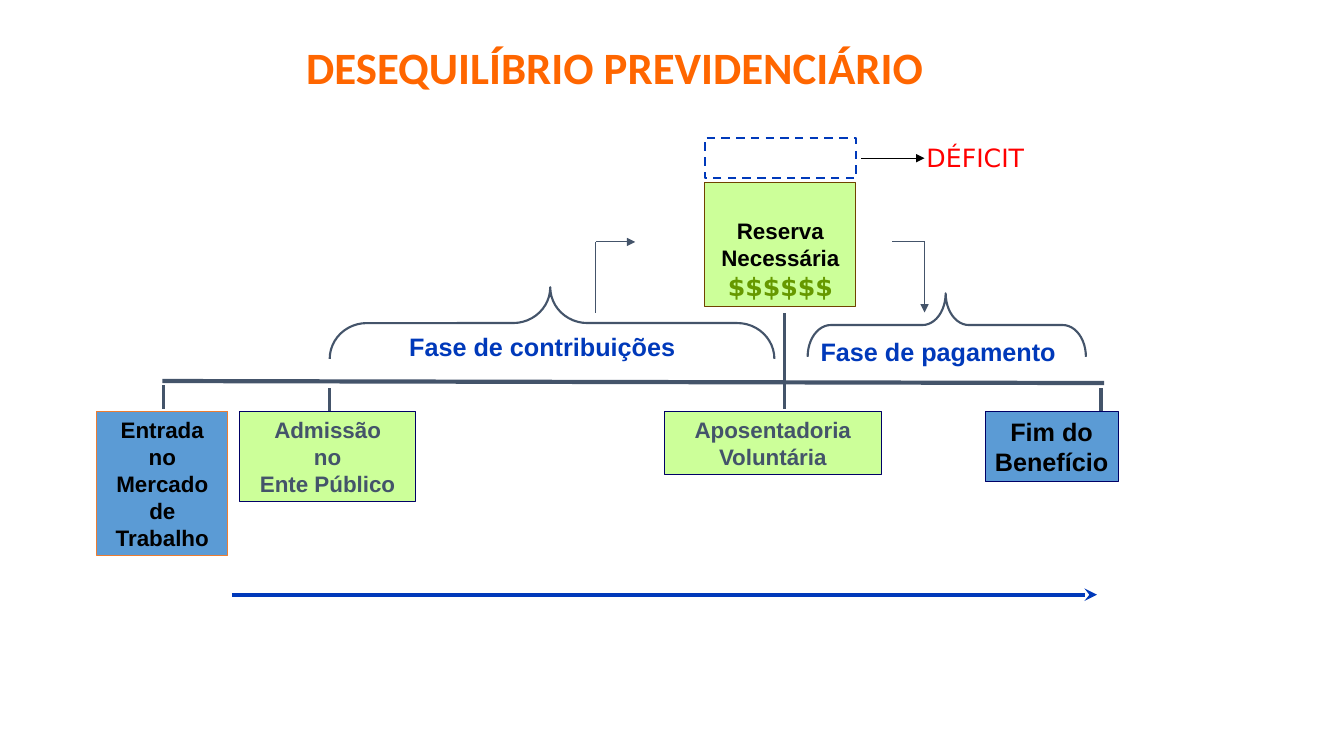
from lxml import etree
from pptx import Presentation
from pptx.dml.color import RGBColor
from pptx.enum.dml import MSO_LINE
from pptx.enum.shapes import MSO_CONNECTOR, MSO_SHAPE
from pptx.enum.text import MSO_ANCHOR, MSO_AUTO_SIZE, PP_ALIGN
from pptx.oxml.ns import qn
from pptx.util import Inches, Pt

STRAIGHT = MSO_CONNECTOR.STRAIGHT
RECTANGLE, BRACE = MSO_SHAPE.RECTANGLE, MSO_SHAPE.LEFT_BRACE
LEFT, CENTER = PP_ALIGN.LEFT, PP_ALIGN.CENTER
TOP, MIDDLE, BOTTOM = MSO_ANCHOR.TOP, MSO_ANCHOR.MIDDLE, MSO_ANCHOR.BOTTOM

COLORS = {
    "orange": "FF6600", "slate": "44546A", "blue": "0039BA", "sky": "5B9BD5",
    "lime": "CCFF99", "navy": "000066", "rust": "ED7D31", "brown": "704300",
    "green": "669900", "red": "FF0000", "black": "000000",
}


def color(name):
    return RGBColor.from_string(COLORS[name])


def add_line(page, start, end, name, width, head=None):
    """Straight line, with an optional arrowhead at its end."""
    line = page.shapes.add_connector(STRAIGHT, *map(Inches, start + end))
    line.line.color.rgb = color(name)
    line.line.width = Pt(width)
    etree.SubElement(line._element.spPr, qn("a:effectLst"))
    if head:
        etree.SubElement(line.line._get_or_add_ln(), qn("a:tailEnd"), type=head)


def add_outline(page, kind, box, line, width, fill=None):
    shape = page.shapes.add_shape(kind, *map(Inches, box))
    shape.shadow.inherit = False
    if fill:
        shape.fill.solid()
        shape.fill.fore_color.rgb = color(fill)
    else:
        shape.fill.background()
    shape.line.color.rgb = color(line)
    shape.line.width = Pt(width)
    return shape


def write(shape, lines, name, size, font="Arial", bold=True, align=CENTER,
          anchor=TOP, wrap=True):
    """Fill a shape with one paragraph per line of text."""
    frame = shape.text_frame
    frame.word_wrap = wrap
    frame.auto_size = MSO_AUTO_SIZE.NONE
    frame.vertical_anchor = anchor
    frame.margin_left = frame.margin_right = Inches(0.1)
    frame.margin_top = frame.margin_bottom = Inches(0.05)
    for index, text in enumerate(lines):
        para = frame.add_paragraph() if index else frame.paragraphs[0]
        para.alignment = align
        span = para.add_run()
        span.text = text
        style(span, name, size, font, bold)


def style(span, name, size, font, bold=True):
    span.font.name = font
    span.font.size = Pt(size)
    span.font.bold = bold
    span.font.color.rgb = color(name)


def add_label(page, box, text, name, **options):
    label = page.shapes.add_textbox(*map(Inches, box))
    write(label, [text], name, 18, align=LEFT, **options)


def add_title(page, box):
    title = page.shapes.title
    title.left, title.top, title.width, title.height = map(Inches, box)
    write(title, ["DESEQUILÍBRIO PREVIDENCIÁRIO"], "orange", 32, "Calibri",
          anchor=MIDDLE)


def add_timeline(page, box):
    """Axis with its ticks, the milestones below and the time arrow."""
    left, top, width, height = box
    add_line(page, (left, top), (left + width, top + 0.02), "slate", 3)
    # Tick x, tick start and end
    for x, start, end in ((0.01, 0.04, 0.28), (1.66, 0.07, 0.3),
                          (6.17, -0.67, 0.28), (9.31, 0.07, 0.3)):
        add_line(page, (left + x, top + start), (left + x, top + end), "slate", 2.25)
    # Milestone x, width, height, fill, border, text colour, size, wrap, lines
    milestones = (
        (-0.65, 1.3, 1.43, "sky", "rust", "black", 16, True,
         ["Entrada no Mercado de Trabalho"]),
        (0.77, 1.74, 0.9, "lime", "navy", "slate", 16, True,
         ["Admissão", "no", "Ente Público"]),
        (4.98, 2.15, 0.63, "lime", "navy", "slate", 16, True,
         ["Aposentadoria", "Voluntária"]),
        (8.16, 1.32, 0.7, "sky", "navy", "black", 18, False,
         ["Fim do", "Benefício"]),
    )
    for x, wide, high, fill, border, ink, size, wrap, lines in milestones:
        place = (left + x, top + 0.3, wide, high)
        milestone = add_outline(page, RECTANGLE, place, border, 0.75, fill)
        write(milestone, lines, ink, size, wrap=wrap)
    bottom = top + height
    add_line(page, (left + 0.69, bottom), (left + 9.27, bottom), "blue", 3, "stealth")


def add_phase(page, box, bend, point, text, label_box):
    """Brace opening downwards over the box, with the phase name below it."""
    left, top, width, height = box
    # The brace is turned a quarter about its centre
    upright = (left + (width - height) / 2, top + (height - width) / 2, height, width)
    brace = add_outline(page, BRACE, upright, "slate", 1.5)
    brace.rotation = 90
    brace.adjustments[0] = bend
    brace.adjustments[1] = point
    x, y, wide, high = label_box
    add_label(page, (left + x, top + y, wide, high), text, "blue")


def add_reserve(page, box):
    """Reserve with the deficit on top and the flows in and out."""
    left, top, width, height = box
    deficit = add_outline(page, RECTANGLE, (left, top, width, 0.4), "blue", 1.5)
    deficit.line.dash_style = MSO_LINE.DASH
    middle = top + 0.2
    add_line(page, (left + 1.55, middle), (left + 2.18, middle), "black", 0.75, "triangle")
    add_label(page, (left + 2.1, top - 0.01, 1.98, 0.4), "DÉFICIT", "red",
              font="DejaVu Sans", bold=False)

    place = (left, top + 0.44, width, height - 0.44)
    reserve = add_outline(page, RECTANGLE, place, "brown", 0.75, "lime")
    write(reserve, ["Reserva Necessária", "$$$$$$"], "black", 16, anchor=BOTTOM)
    money = reserve.text_frame.paragraphs[1].runs[0]
    style(money, "green", 18, "DejaVu Sans")

    # Elbow arrows: contributions in, payments out
    bend = top + 1.03
    for start, end, head in (((-1.08, 0), (-1.08, 0.71), None),
                             ((-1.08, 0), (-0.69, 0), "triangle"),
                             ((1.86, 0), (2.18, 0), None),
                             ((2.18, 0), (2.18, 0.7), "triangle")):
        add_line(page, (left + start[0], bend + start[1]),
                 (left + end[0], bend + end[1]), "slate", 0.75, head)


def main():
    deck = Presentation()
    deck.slide_width, deck.slide_height = Inches(13.33), Inches(7.5)
    page = deck.slides.add_slide(deck.slide_layouts[5])
    add_title(page, (1.6, 0.27, 9, 0.79))
    add_timeline(page, (1.61, 3.78, 9.34, 2.12))
    add_phase(page, (3.27, 2.85, 4.41, 0.71), 0.519, 0.504,
              "Fase de contribuições", (0.69, 0.39, 2.99, 0.4))
    add_phase(page, (8.01, 2.91, 2.76, 0.63), 0.365, 0.504,
              "Fase de pagamento", (0.03, 0.38, 2.7, 0.4))
    add_reserve(page, (6.99, 1.37, 1.5, 1.67))
    deck.save("out.pptx")


if __name__ == "__main__":
    main()
